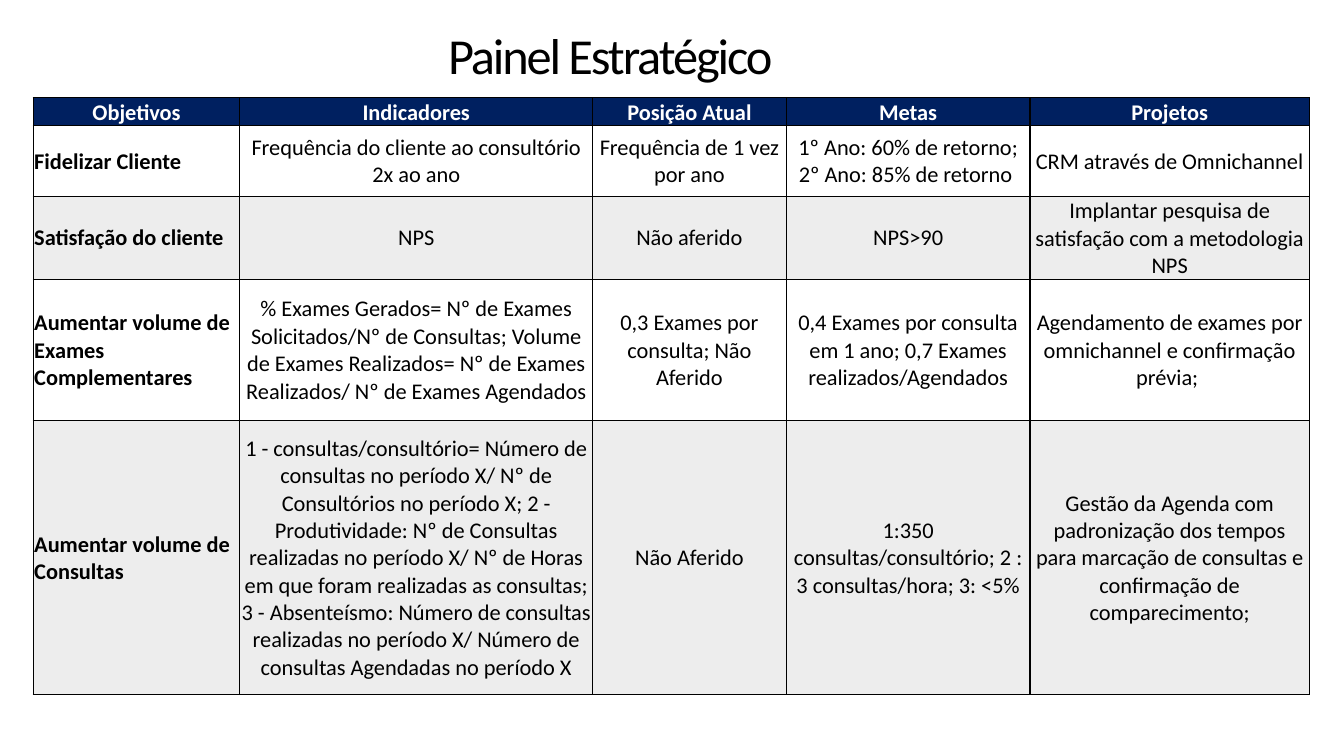
from dataclasses import dataclass

from lxml.etree import SubElement
from pptx import Presentation
from pptx.dml.color import RGBColor
from pptx.enum.text import MSO_ANCHOR, PP_ALIGN
from pptx.oxml.ns import qn
from pptx.util import Pt


@dataclass(frozen=True)
class Theme:
    font: str = "Calibri"
    title_size: int = 36
    table_size: int = 16
    text: str = "000000"
    header_text: str = "FFFFFF"
    header_fill: str = "002060"
    plain_fill: str = "FFFFFF"
    band_fill: str = "EDEDED"
    border: str = "000000"
    border_width: int = 1


THEME = Theme()

TITLE = "Painel Estratégico "
COLUMN_WIDTHS = (147.6, 252, 138.24, 174.24, 199.44)
ROW_HEIGHTS = (20, 50.4, 59.3, 100.8, 196)
PANEL_ROWS = (
    ("Objetivos", "Indicadores", "Posição Atual", "Metas", "Projetos"),
    (
        "Fidelizar Cliente",
        "Frequência do cliente ao consultório 2x ao ano",
        "Frequência de 1 vez por ano",
        "1º Ano: 60% de retorno; 2º Ano: 85% de retorno ",
        "CRM através de Omnichannel",
    ),
    (
        "Satisfação do cliente",
        "NPS",
        "Não aferido",
        "NPS>90",
        "Implantar pesquisa de satisfação com a metodologia NPS",
    ),
    (
        "Aumentar volume de Exames Complementares",
        "% Exames Gerados= Nº de Exames Solicitados/Nº de Consultas; "
        "Volume de Exames Realizados= Nº de Exames Realizados/ "
        "Nº de Exames Agendados",
        "0,3 Exames por consulta; Não Aferido",
        "0,4 Exames por consulta em 1 ano; 0,7 Exames realizados/Agendados",
        "Agendamento de exames por omnichannel e confirmação prévia; ",
    ),
    (
        "Aumentar volume de Consultas",
        "1 - consultas/consultório= Número de consultas no período X/ "
        "Nº de Consultórios no período X; 2 - Produtividade: Nº de Consultas "
        "realizadas no período X/ Nº de Horas em que foram realizadas as "
        "consultas; 3 - Absenteísmo: Número de consultas realizadas no "
        "período X/ Número de consultas Agendadas no período X",
        "Não Aferido",
        "1:350 consultas/consultório; 2 : 3 consultas/hora; 3: <5%",
        "Gestão da Agenda com padronização dos tempos para marcação de "
        "consultas e confirmação de comparecimento;",
    ),
)


def format_text(frame, size, color, bold=False, align=PP_ALIGN.CENTER):
    for para in frame.paragraphs:
        para.alignment = align
        for span in para.runs:
            span.font.name = THEME.font
            span.font.size = Pt(size)
            span.font.bold = bold
            span.font.color.rgb = RGBColor.from_string(color)


def add_title(page):
    box = page.shapes.add_textbox(Pt(204.48), Pt(14.4), Pt(469.44), Pt(56.16))
    frame = box.text_frame
    frame.word_wrap = True
    frame.vertical_anchor = MSO_ANCHOR.MIDDLE
    frame.margin_left = frame.margin_right = Pt(18)
    frame.margin_top = frame.margin_bottom = Pt(18)
    frame.text = TITLE
    format_text(frame, THEME.title_size, THEME.text)
    para = frame.paragraphs[0]
    para.line_spacing = 0.85
    para.runs[0].font._element.set("spc", "-150")


def add_borders(cell):
    properties = cell._tc.get_or_add_tcPr()
    for side in ("a:lnL", "a:lnR", "a:lnT", "a:lnB"):
        line = SubElement(properties, qn(side), w=str(Pt(THEME.border_width)))
        fill = SubElement(line, qn("a:solidFill"))
        SubElement(fill, qn("a:srgbClr"), val=THEME.border)


def fill_cell(cell, text, row, column):
    header = row == 0
    if header:
        background = THEME.header_fill
    else:
        background = THEME.plain_fill if row % 2 else THEME.band_fill
    cell.text_frame.text = text
    cell.vertical_anchor = MSO_ANCHOR.MIDDLE
    cell.margin_left = cell.margin_right = cell.margin_top = Pt(0.72)
    cell.margin_bottom = Pt(0)
    add_borders(cell)
    cell.fill.solid()
    cell.fill.fore_color.rgb = RGBColor.from_string(background)
    format_text(
        cell.text_frame,
        THEME.table_size,
        THEME.header_text if header else THEME.text,
        bold=header or column == 0,
        align=PP_ALIGN.LEFT if column == 0 and not header else PP_ALIGN.CENTER,
    )


def add_panel(page):
    table = page.shapes.add_table(
        len(ROW_HEIGHTS), len(COLUMN_WIDTHS), Pt(23.76), Pt(69.84),
        Pt(sum(COLUMN_WIDTHS)), Pt(sum(ROW_HEIGHTS)),
    ).table
    table.horz_banding = False
    for column, width in zip(table.columns, COLUMN_WIDTHS):
        column.width = Pt(width)
    for row, height in zip(table.rows, ROW_HEIGHTS):
        row.height = Pt(height)
    for row, texts in enumerate(PANEL_ROWS):
        for column, text in enumerate(texts):
            fill_cell(table.cell(row, column), text, row, column)


def main():
    deck = Presentation()
    deck.slide_width = Pt(960)
    deck.slide_height = Pt(540)
    page = deck.slides.add_slide(deck.slide_layouts[6])
    add_title(page)
    add_panel(page)
    deck.save("out.pptx")


if __name__ == "__main__":
    main()
